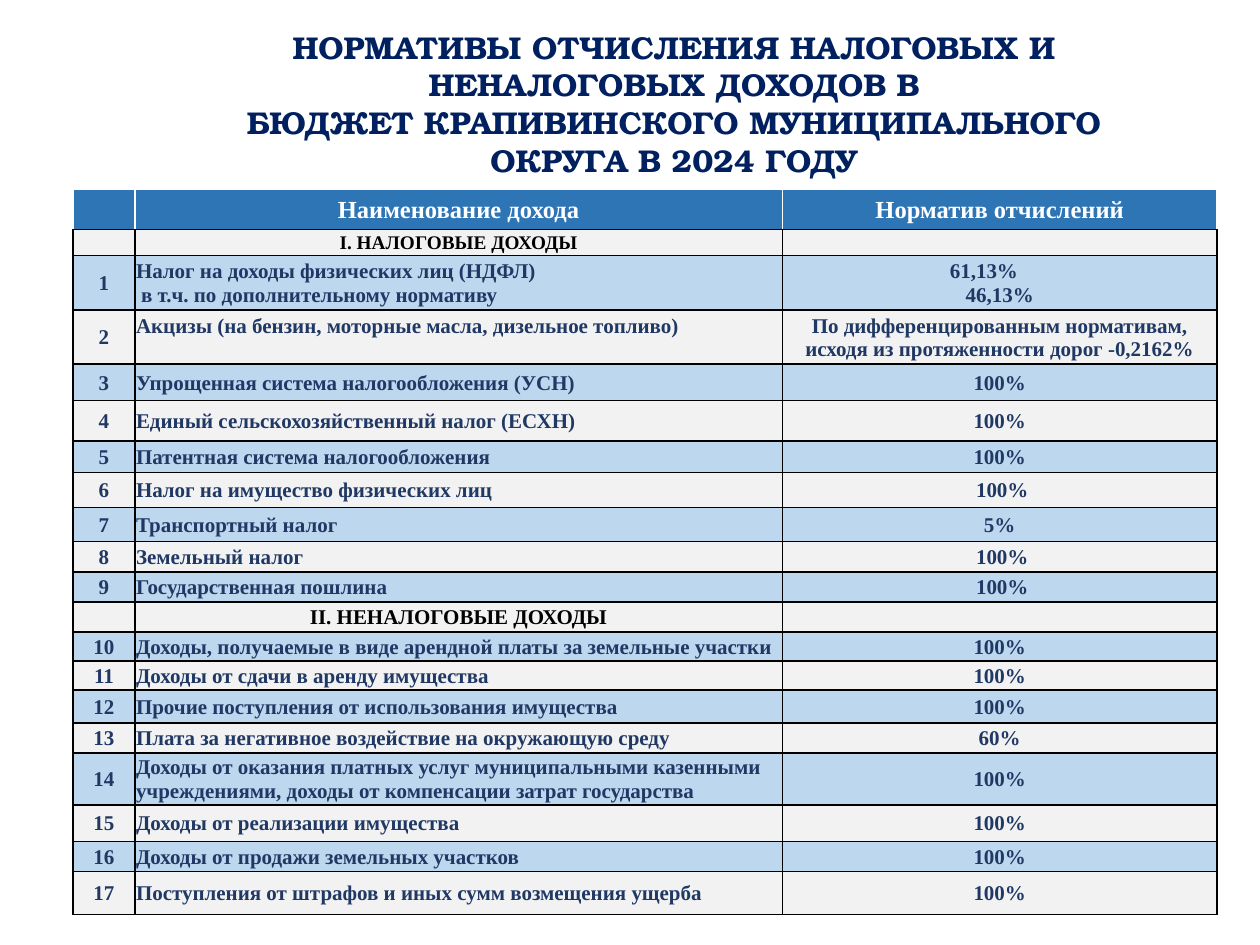
from lxml import etree
from pptx import Presentation
from pptx import util as u
from pptx.dml.color import RGBColor
from pptx.enum import text
from pptx.oxml.ns import qn

COLORS = {"title": "002060", "header": "2E75B6", "blue": "BDD7EE", "grey": "F2F2F2",
          "body": "203864", "white": "FFFFFF", "black": "000000"}
TITLE = ["НОРМАТИВЫ ОТЧИСЛЕНИЯ НАЛОГОВЫХ И НЕНАЛОГОВЫХ ДОХОДОВ В",
         "БЮДЖЕТ КРАПИВИНСКОГО МУНИЦИПАЛЬНОГО ОКРУГА В 2024 ГОДУ"]
HEADER = ("Наименование дохода", "Норматив отчислений")
TAXES = [
    ("Налог на доходы физических лиц (НДФЛ)\nв т.ч. по дополнительному нормативу", "61,13%\n46,13%"),
    ("Акцизы (на бензин, моторные масла, дизельное топливо)",
     "По дифференцированным нормативам,\nисходя из протяженности дорог -0,2162%"),
    ("Упрощенная система налогообложения (УСН)", "100%"),
    ("Единый сельскохозяйственный налог (ЕСХН)", "100%"),
    ("Патентная система налогообложения", "100%"),
    ("Налог на имущество физических лиц", "100%"),
    ("Транспортный налог", "5%"),
    ("Земельный налог", "100%"),
    ("Государственная пошлина", "100%"),
]
NON_TAXES = [
    ("Доходы, получаемые в виде арендной платы за земельные участки", "100%"),
    ("Доходы от сдачи в аренду имущества", "100%"),
    ("Прочие поступления от использования имущества", "100%"),
    ("Плата за негативное воздействие на окружающую среду", "60%"),
    ("Доходы от оказания платных услуг муниципальными казенными учреждениями, "
     "доходы от компенсации затрат государства", "100%"),
    ("Доходы от реализации имущества", "100%"),
    ("Доходы от продажи земельных участков", "100%"),
    ("Поступления от штрафов и иных сумм возмещения ущерба", "100%"),
]
SECTIONS = [("I. НАЛОГОВЫЕ ДОХОДЫ", 11, TAXES), ("II. НЕНАЛОГОВЫЕ ДОХОДЫ", 12, NON_TAXES)]
COLUMNS = [0.49, 5.14, 3.45]
ROWS = [0.32, 0.21, 0.43, 0.43, 0.29, 0.32, 0.25, 0.28, 0.27, 0.24,
        0.24, 0.24, 0.23, 0.23, 0.26, 0.24, 0.38, 0.29, 0.24, 0.34]
CENTER, LEFT = text.PP_ALIGN.CENTER, text.PP_ALIGN.LEFT


def format_lines(frame, size, color, face, align):
    for line in frame.paragraphs:
        line.alignment = align
        for run in line.runs:
            run.font.size = u.Pt(size)
            run.font.bold = True
            run.font.name = face
            run.font.color.rgb = RGBColor.from_string(COLORS[color])
        if not line.runs:
            etree.SubElement(line._p, qn("a:endParaRPr"), sz=str(size * 100))


def indent(line, inches):
    line._p.get_or_add_pPr().set("marL", str(u.Inches(inches)))


def add_borders(cell, sides):
    properties = cell._tc.get_or_add_tcPr()
    for position, (side, color) in enumerate(sides.items()):
        border = etree.Element(qn("a:ln" + side), w=str(u.Pt(1)))
        fill = etree.SubElement(border, qn("a:solidFill"))
        etree.SubElement(fill, qn("a:srgbClr"), val=COLORS[color])
        properties.insert(position, border)


def fill_cell(cell, words, size, color, fill, align, edge):
    cell.margin_left = cell.margin_right = cell.margin_top = u.Inches(0.01)
    cell.margin_bottom = 0
    cell.vertical_anchor = text.MSO_ANCHOR.MIDDLE
    cell.text_frame.text = words
    format_lines(cell.text_frame, size, color, "Times New Roman", align)
    cell.fill.solid()
    cell.fill.fore_color.rgb = RGBColor.from_string(COLORS[fill])
    add_borders(cell, {"L": edge, "R": edge, "T": edge, "B": "black"})


def table_rows():
    yield ("", *HEADER), 14, "white", "header", CENTER, "white"
    number = 0
    for heading, size, incomes in SECTIONS:
        yield ("", heading, ""), size, "black", "grey", CENTER, "black"
        for name, share in incomes:
            number += 1
            band = "blue" if (number + (incomes is NON_TAXES)) % 2 else "grey"
            yield (str(number), name, share), 12, "body", band, LEFT, "black"


def main():
    deck = Presentation()
    deck.slide_width, deck.slide_height = u.Inches(10), u.Inches(7.5)
    slide = deck.slides.add_slide(deck.slide_layouts[6])

    title = slide.shapes.add_textbox(*map(u.Inches, (1.75, 0.17, 7.2, 1.31))).text_frame
    title.word_wrap = True
    title.text = "\n".join(TITLE)
    format_lines(title, 18, "title", "TeX Gyre Bonum", CENTER)

    rates = slide.shapes.add_table(len(ROWS), len(COLUMNS), u.Inches(0.58), u.Inches(1.5),
                                   u.Inches(sum(COLUMNS)), u.Inches(sum(ROWS))).table
    for column, width in zip(rates.columns, COLUMNS):
        column.width = u.Inches(width)
    for row, height in zip(rates.rows, ROWS):
        row.height = u.Inches(height)

    for row, (words, size, color, fill, name_align, edge) in zip(rates.rows, table_rows()):
        for cell, content, align in zip(row.cells, words, (CENTER, name_align, CENTER)):
            fill_cell(cell, content, size, color, fill, align, edge)

    income_tax, income_share = rates.cell(2, 1), rates.cell(2, 2)
    indent(income_tax.text_frame.paragraphs[1], 0.04)
    income_share.margin_right = u.Inches(0.26)
    indent(income_share.text_frame.paragraphs[1], 0.25)
    excise = rates.cell(3, 1)
    excise.vertical_anchor = text.MSO_ANCHOR.TOP
    excise.margin_top = u.Inches(0.04)
    for tax in (6, 8, 9):
        indent(rates.cell(tax + 1, 2).text_frame.paragraphs[0], 0.04)

    deck.save("out.pptx")


if __name__ == "__main__":
    main()
